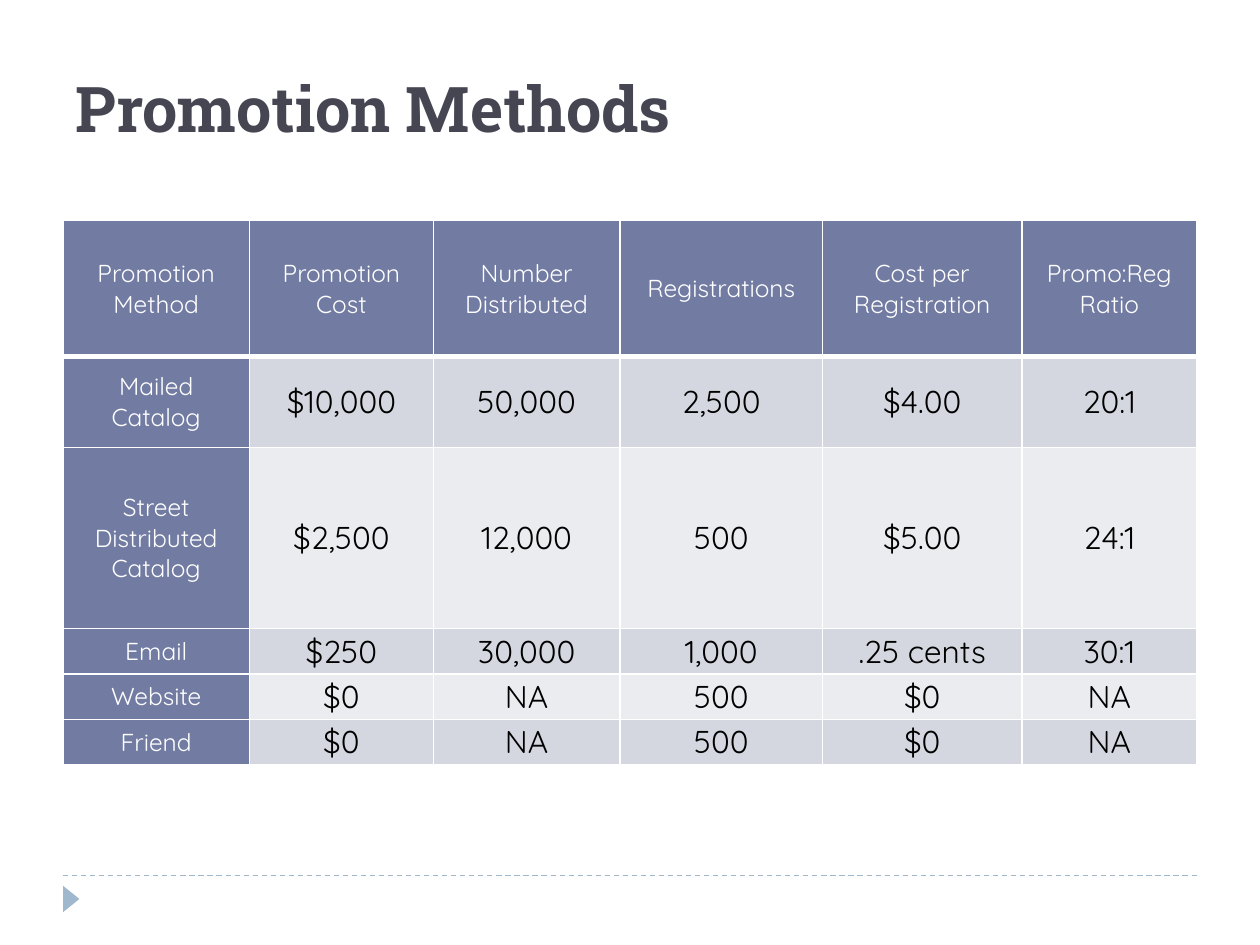
from dataclasses import dataclass

from lxml.etree import SubElement
from pptx import Presentation
from pptx.dml.color import RGBColor
from pptx.enum.dml import MSO_LINE
from pptx.enum.shapes import MSO_CONNECTOR, MSO_SHAPE
from pptx.enum.text import MSO_ANCHOR, PP_ALIGN
from pptx.oxml.ns import qn
from pptx.util import Inches, Pt


@dataclass(frozen=True)
class Theme:
    title_font: str = "Roboto Slab"
    body_font: str = "Quicksand"
    title_size: int = 36
    heading_size: int = 14
    value_size: int = 18
    title: str = "464653"
    heading_fill: str = "727CA3"
    bands: tuple = ("D5D7E0", "EBECF0")
    heading_text: str = "FFFFFF"
    value_text: str = "000000"
    border: str = "FFFFFF"
    accent: str = "9FB8CD"


THEME = Theme()

PROMOTIONS = [
    ["Promotion Method", "Promotion Cost", "Number Distributed",
     "Registrations", "Cost per Registration", "Promo:Reg Ratio"],
    ["Mailed Catalog", "$10,000", "50,000", "2,500", "$4.00", "20:1"],
    ["Street Distributed Catalog", "$2,500", "12,000", "500", "$5.00", "24:1"],
    ["Email", "$250", "30,000", "1,000", ".25 cents", "30:1"],
    ["Website", "$0", "NA", "500", "$0", "NA"],
    ["Friend", "$0", "NA", "500", "$0", "NA"],
]
COLUMN_WIDTHS = [1.48, 1.46, 1.48, 1.61, 1.58, 1.39]
ROW_HEIGHTS = [1.08, 0.72, 1.44, 0.36, 0.36, 0.36]


def rgb(value):
    return RGBColor.from_string(value)


def style_font(paragraph, name, size, color, bold=False):
    font = paragraph.font
    font.name, font.size, font.bold = name, Pt(size), bold
    font.color.rgb = rgb(color)


def add_title(slide, text):
    title = slide.shapes.add_textbox(Inches(0.5), Inches(0.5), Inches(9), Inches(0.83))
    title.text_frame.word_wrap = True
    title.text_frame.text = text
    style_font(title.text_frame.paragraphs[0], THEME.title_font,
               THEME.title_size, THEME.title, bold=True)


def set_borders(cell, bottom_width):
    """Draw the four cell edges; must run before the cell is filled."""
    properties = cell._tc.get_or_add_tcPr()
    for edge, width in (("L", 1), ("R", 1), ("T", 1), ("B", bottom_width)):
        line = SubElement(properties, qn(f"a:ln{edge}"), w=str(Pt(width)))
        fill = SubElement(line, qn("a:solidFill"))
        SubElement(fill, qn("a:srgbClr"), val=THEME.border)


def fill_cell(cell, text, row, column):
    is_heading = row == 0 or column == 0
    set_borders(cell, bottom_width=3 if row == 0 else 1)
    cell.fill.solid()
    cell.fill.fore_color.rgb = rgb(
        THEME.heading_fill if is_heading else THEME.bands[(row - 1) % 2])
    cell.margin_left = cell.margin_right = Inches(0.07)
    cell.margin_top = cell.margin_bottom = 0
    cell.vertical_anchor = MSO_ANCHOR.MIDDLE
    cell.text = text
    paragraph = cell.text_frame.paragraphs[0]
    paragraph.alignment = PP_ALIGN.CENTER
    style_font(paragraph, THEME.body_font,
               THEME.heading_size if is_heading else THEME.value_size,
               THEME.heading_text if is_heading else THEME.value_text)


def add_promotion_table(slide):
    table = slide.shapes.add_table(
        len(ROW_HEIGHTS), len(COLUMN_WIDTHS), Inches(0.5), Inches(1.75),
        Inches(sum(COLUMN_WIDTHS)), Inches(sum(ROW_HEIGHTS))).table
    table.first_col = True
    for column, width in zip(table.columns, COLUMN_WIDTHS):
        column.width = Inches(width)
    for row, height in zip(table.rows, ROW_HEIGHTS):
        row.height = Inches(height)
    for r, values in enumerate(PROMOTIONS):
        for c, text in enumerate(values):
            fill_cell(table.cell(r, c), text, r, c)


def add_footer_rule(slide):
    rule = slide.shapes.add_connector(
        MSO_CONNECTOR.STRAIGHT, Inches(0.5), Inches(6.95), Inches(9.5), Inches(6.95))
    rule.line.color.rgb = rgb(THEME.accent)
    rule.line.width = Pt(0.75)
    rule.line.dash_style = MSO_LINE.DASH
    SubElement(rule._element.spPr, qn("a:effectLst"))


def add_footer_marker(slide):
    marker = slide.shapes.add_shape(
        MSO_SHAPE.ISOSCELES_TRIANGLE, Inches(0.46), Inches(7.07), Inches(0.21), Inches(0.13))
    marker.rotation = 90
    marker.shadow.inherit = False
    marker.fill.solid()
    marker.fill.fore_color.rgb = rgb(THEME.accent)
    marker.line.fill.background()


def main():
    deck = Presentation()
    deck.slide_width, deck.slide_height = Inches(10), Inches(7.5)
    slide = deck.slides.add_slide(deck.slide_layouts[6])
    add_footer_rule(slide)
    add_footer_marker(slide)
    add_promotion_table(slide)
    add_title(slide, "Promotion Methods")
    deck.save("out.pptx")


if __name__ == "__main__":
    main()
